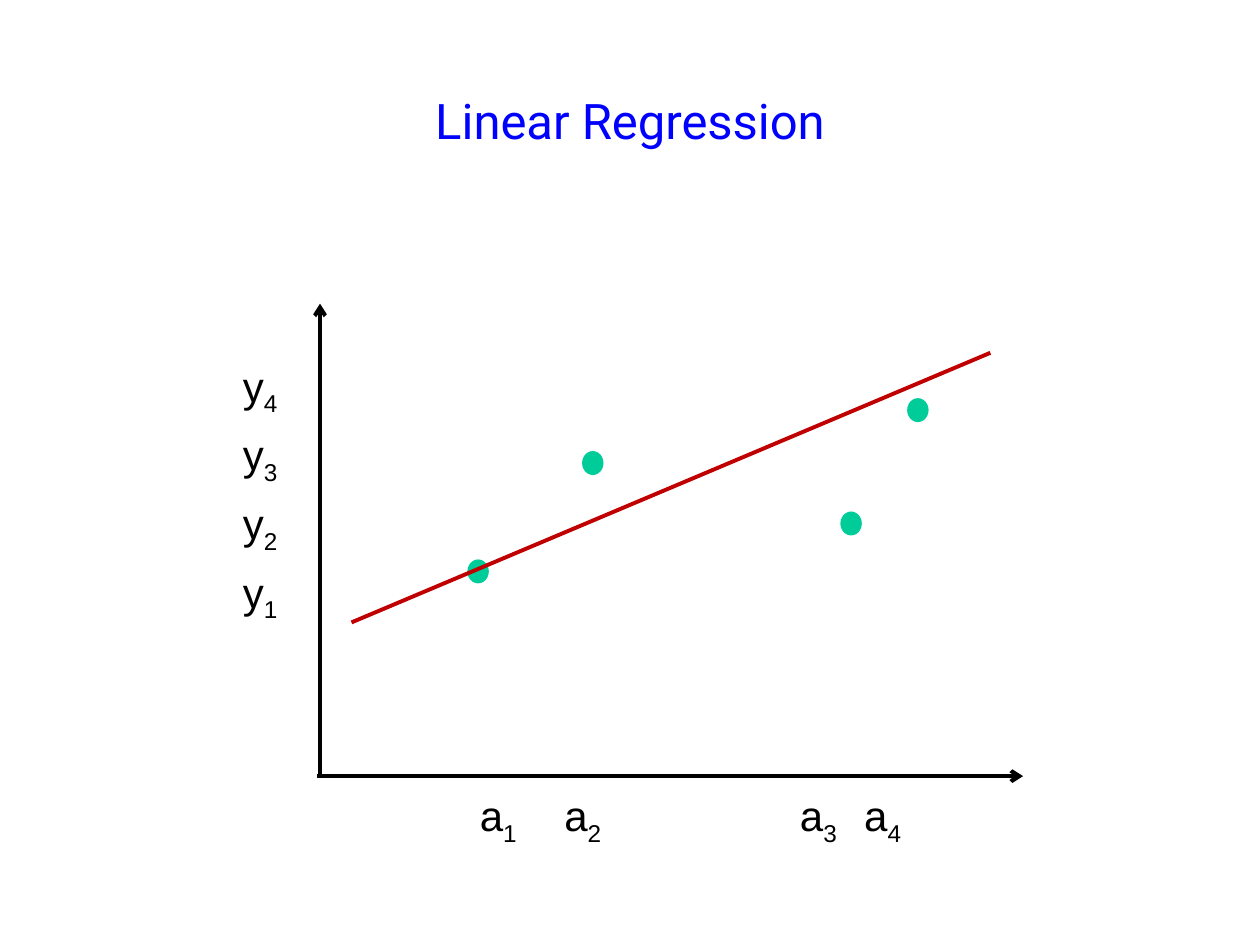
from lxml.etree import SubElement
from pptx import Presentation
from pptx.dml.color import RGBColor
from pptx.enum.shapes import MSO_CONNECTOR, MSO_SHAPE
from pptx.enum.text import MSO_ANCHOR, MSO_AUTO_SIZE, PP_ALIGN
from pptx.oxml.ns import qn
from pptx.util import Inches, Pt

# Content
TITLE = "Linear Regression"
AXES = [((2.54, 2.41), (2.54, 6.17)), ((8.12, 6.16), (2.52, 6.16))]  # tip, origin
POINTS = [(3.71, 4.44), (4.62, 3.58), (6.67, 4.06), (7.2, 3.16)]
POINT_SIZE = (0.17, 0.19)
FIT_LINE = ((2.79, 4.94), (7.86, 2.8))
X_LABELS = [[("a", "1"), ("a", "2"), ("a", "3"), ("a", "4")]]
X_LABEL_TABS = [0.67, 2.54, 3.05]
Y_LABELS = [[("y", "4")], [("y", "3")], [("y", "2")], [("y", "1")]]

THEME = {
    "title_font": "Roboto", "title_size": Pt(28), "title": RGBColor(0, 0, 255),
    "label_font": "Arial", "label_size": Pt(24), "label": RGBColor(0, 0, 0),
    "label_gap": Pt(6.5), "line_width": Pt(2.25),
    "axis": RGBColor(0, 0, 0), "point": RGBColor(0, 0xCC, 0x99),
    "fit": RGBColor(0xC0, 0, 0),
}


def format_run(run, role):
    run.font.name = THEME[f"{role}_font"]
    run.font.size = THEME[f"{role}_size"]
    run.font.color.rgb = THEME[role]


def add_line(slide, start, end, color, arrow=False):
    connector = slide.shapes.add_connector(
        MSO_CONNECTOR.STRAIGHT, *(Inches(value) for value in start + end))
    connector.line.color.rgb = color
    connector.line.width = THEME["line_width"]
    if arrow:
        SubElement(connector.line._get_or_add_ln(), qn("a:headEnd"), type="arrow")
    SubElement(connector._element.spPr, qn("a:effectLst"))


def add_labels(slide, box, rows, tabs=()):
    """One paragraph per row; labels within a row are set on tab stops."""
    frame = slide.shapes.add_textbox(*(Inches(value) for value in box)).text_frame
    frame.word_wrap = True
    frame.auto_size = MSO_AUTO_SIZE.SHAPE_TO_FIT_TEXT
    for row_index, row in enumerate(rows):
        paragraph = frame.add_paragraph() if row_index else frame.paragraphs[0]
        if tabs:
            tab_list = SubElement(paragraph._p.get_or_add_pPr(), qn("a:tabLst"))
            for tab in tabs:
                SubElement(tab_list, qn("a:tab"), pos=str(Inches(tab)), algn="l")
        if row_index:
            paragraph.space_before = THEME["label_gap"]
        for label_index, (letter, subscript) in enumerate(row):
            for text, baseline in (("\t" if label_index else "") + letter, 0), (subscript, -25000):
                run = paragraph.add_run()
                run.text = text
                format_run(run, "label")
                if baseline:
                    run._r.get_or_add_rPr().set("baseline", str(baseline))


presentation = Presentation()
presentation.slide_width, presentation.slide_height = Inches(10), Inches(7.5)
slide = presentation.slides.add_slide(presentation.slide_layouts[5])

# Title
title = slide.shapes.title
title.left, title.top = Inches(0.75), Inches(0.33)
title.width, title.height = Inches(8.5), Inches(1.25)
title.text_frame.vertical_anchor = MSO_ANCHOR.MIDDLE
paragraph = title.text_frame.paragraphs[0]
paragraph.alignment = PP_ALIGN.CENTER
run = paragraph.add_run()
run.text = TITLE
format_run(run, "title")

# Axes
for tip, origin in AXES:
    add_line(slide, tip, origin, THEME["axis"], arrow=True)

# Data points
for point in POINTS:
    dot = slide.shapes.add_shape(
        MSO_SHAPE.OVAL, *(Inches(value) for value in point + POINT_SIZE))
    dot.shadow.inherit = False
    dot.fill.solid()
    dot.fill.fore_color.rgb = THEME["point"]
    dot.line.fill.background()

# Regression line
add_line(slide, *FIT_LINE, THEME["fit"])

# Axis labels
add_labels(slide, (3.71, 6.22, 4.62, 0.5), X_LABELS, X_LABEL_TABS)
add_labels(slide, (1.83, 2.81, 4.62, 1.96), Y_LABELS)

presentation.save("out.pptx")
